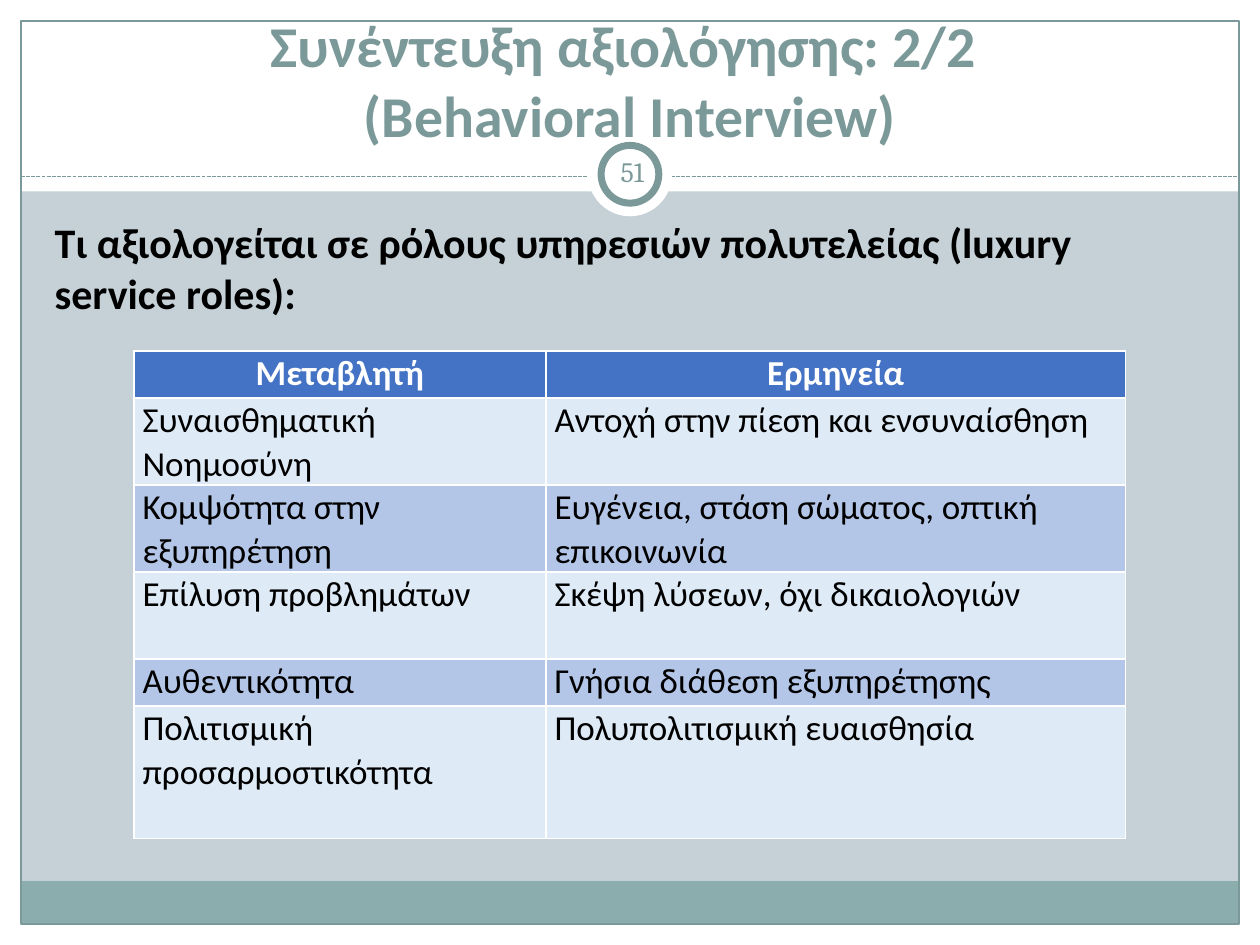
"""Build the slide on behavioural interviews for luxury service roles."""
import pptx
import pptx.dml.color
import pptx.enum.dml
import pptx.enum.shapes
import pptx.enum.text
import pptx.oxml
import pptx.oxml.ns
import pptx.util

Pt = pptx.util.Pt
ALIGN = pptx.enum.text.PP_ALIGN
ANCHOR = pptx.enum.text.MSO_ANCHOR
SHAPE = pptx.enum.shapes.MSO_SHAPE

COLORS = {
    "background": "C5D1D7", "white": "FFFFFF", "black": "000000",
    "accent": "7C999A", "footer": "8CADAE",
    "header": "4472C4", "light": "DEEAF6", "dark": "B4C6E7",
}
TITLE = "Συνέντευξη αξιολόγησης: 2/2 \v(Behavioral Interview)"
QUESTION = "Τι αξιολογείται σε ρόλους υπηρεσιών πολυτελείας (luxury service roles):"
PAGE_NUMBER = "51"
ROWS = [
    ("Μεταβλητή", "Ερμηνεία"),
    ("Συναισθηματική Νοημοσύνη", "Αντοχή στην πίεση και ενσυναίσθηση"),
    ("Κομψότητα στην εξυπηρέτηση", "Ευγένεια, στάση σώματος, οπτική επικοινωνία"),
    ("Επίλυση προβλημάτων", "Σκέψη λύσεων, όχι δικαιολογιών"),
    ("Αυθεντικότητα", "Γνήσια διάθεση εξυπηρέτησης"),
    ("Πολιτισμική προσαρμοστικότητα", "Πολυπολιτισμική ευαισθησία"),
]
ROW_HEIGHTS = [26.9, 49.7, 49.7, 49.7, 26.9, 75.6]
COLUMN_WIDTHS = [235.4, 331.2]
TABLE_LEFT, TABLE_TOP = 76.5, 200.7

WIDTH, HEIGHT, EDGE = 720, 540, 12
CENTER_X, CENTER_Y = WIDTH / 2, 99.6
INNER_WIDTH = WIDTH - 2 * EDGE


def circle_box(diameter):
    return (CENTER_X - diameter / 2, CENTER_Y - diameter / 2, diameter, diameter)


BANDS = [
    ((0, HEIGHT - EDGE, WIDTH, EDGE), "white"),
    ((0, 0, WIDTH, 109.4), "white"),
    ((0, 0, EDGE, HEIGHT), "white"),
    ((WIDTH - EDGE, 0, EDGE, HEIGHT), "white"),
    ((EDGE, 503.5, INNER_WIDTH, 24.5), "footer"),
]


def rgb(name):
    return pptx.dml.color.RGBColor.from_string(COLORS[name])


def set_attributes(target, values):
    for name, value in values.items():
        setattr(target, name, value)


def place(shape, box):
    set_attributes(shape, dict(zip(("left", "top", "width", "height"), map(Pt, box))))


def add_shape(slide, kind, box, fill=None, line=None, weight=0.75):
    shape = slide.shapes.add_shape(kind, *map(Pt, box))
    shape.shadow.inherit = False
    if fill:
        shape.fill.solid()
        shape.fill.fore_color.rgb = rgb(fill)
    else:
        shape.fill.background()
    if line:
        shape.line.color.rgb = rgb(line)
        shape.line.width = Pt(weight)
    else:
        shape.line.fill.background()


def write(frame, text, size, color, bold=False, font="Calibri", **layout):
    frame.text = text
    paragraph = frame.paragraphs[0]
    set_attributes(paragraph, layout)
    for run in paragraph.runs:
        set_attributes(run.font, {"size": Pt(size), "bold": bold, "name": font})
        run.font.color.rgb = rgb(color)
    return paragraph


def add_divider(slide):
    y = Pt(100.8)
    line = slide.shapes.add_connector(
        pptx.enum.shapes.MSO_CONNECTOR.STRAIGHT, Pt(EDGE), y, Pt(WIDTH - EDGE), y)
    line.line.color.rgb = rgb("accent")
    line.line.width = Pt(0.75)
    line.line.dash_style = pptx.enum.dml.MSO_LINE.SQUARE_DOT
    properties = line.element.find(pptx.oxml.ns.qn("p:spPr"))
    properties.append(pptx.oxml.parse_xml(
        f'<a:effectLst {pptx.oxml.ns.nsdecls("a")}/>'))


def add_frame(slide):
    for box, color in BANDS:
        add_shape(slide, SHAPE.RECTANGLE, box, color)
    add_shape(slide, SHAPE.RECTANGLE, (EDGE, EDGE, INNER_WIDTH, HEIGHT - 2 * EDGE),
              line="accent")
    add_divider(slide)
    add_shape(slide, SHAPE.OVAL, circle_box(48), "white")
    add_shape(slide, SHAPE.OVAL, circle_box(33), "white", "accent", 4)


def add_texts(slide):
    title, body = slide.shapes.title, slide.placeholders[1]
    for shape in (body, title):
        slide.shapes.element.append(shape.element)
        shape.text_frame.auto_size = pptx.enum.text.MSO_AUTO_SIZE.NONE
    place(title, (24, 20.9, 672, 67.7))
    title.text_frame.vertical_anchor = ANCHOR.BOTTOM
    write(title.text_frame, TITLE, 33, "accent", True, alignment=ALIGN.CENTER)

    place(body, (24, 120.2, 669.6, 64.8))
    paragraph = write(body.text_frame, QUESTION, 24, "black", True)
    properties = paragraph._p.get_or_add_pPr()
    for name in ("marL", "indent"):
        properties.set(name, "0")
    properties.append(pptx.oxml.parse_xml(f'<a:buNone {pptx.oxml.ns.nsdecls("a")}/>'))

    number = slide.shapes.add_textbox(*map(Pt, (343.4, 80.6, 36, 34.6)))
    margins = dict.fromkeys(
        ("margin_left", "margin_right", "margin_top", "margin_bottom"), Pt(3.6))
    set_attributes(number.text_frame, {
        "word_wrap": True, "vertical_anchor": ANCHOR.MIDDLE, **margins})
    write(number.text_frame, PAGE_NUMBER, 16, "accent", font="Cambria",
          alignment=ALIGN.CENTER)


def add_borders(cell):
    properties = cell._tc.get_or_add_tcPr()
    for side in "LRTB":
        properties.append(pptx.oxml.parse_xml(
            f'<a:ln{side} {pptx.oxml.ns.nsdecls("a")} w="12700"><a:solidFill>'
            f'<a:srgbClr val="{COLORS["white"]}"/></a:solidFill></a:ln{side}>'))


def add_table(slide):
    table = slide.shapes.add_table(
        len(ROWS), len(COLUMN_WIDTHS), Pt(TABLE_LEFT), Pt(TABLE_TOP),
        Pt(sum(COLUMN_WIDTHS)), Pt(sum(ROW_HEIGHTS))).table
    for column, width in zip(table.columns, COLUMN_WIDTHS):
        column.width = Pt(width)
    for index, (row, height, texts) in enumerate(zip(table.rows, ROW_HEIGHTS, ROWS)):
        row.height = Pt(height)
        heading = index == 0
        fill = "header" if heading else ("dark", "light")[index % 2]
        for cell, text in zip(row.cells, texts):
            set_attributes(cell, {"margin_left": Pt(5), "margin_right": Pt(5),
                                  "margin_top": 0, "margin_bottom": 0})
            add_borders(cell)
            cell.fill.solid()
            cell.fill.fore_color.rgb = rgb(fill)
            write(cell.text_frame, text, 20, "white" if heading else "black", heading,
                  alignment=ALIGN.CENTER if heading else ALIGN.LEFT, line_spacing=1.02)


def main():
    presentation = pptx.Presentation()
    set_attributes(presentation, {"slide_width": Pt(WIDTH), "slide_height": Pt(HEIGHT)})
    slide = presentation.slides.add_slide(presentation.slide_layouts[1])
    slide.background.fill.solid()
    slide.background.fill.fore_color.rgb = rgb("background")
    add_frame(slide)
    add_texts(slide)
    add_table(slide)
    presentation.save("out.pptx")


if __name__ == "__main__":
    main()
